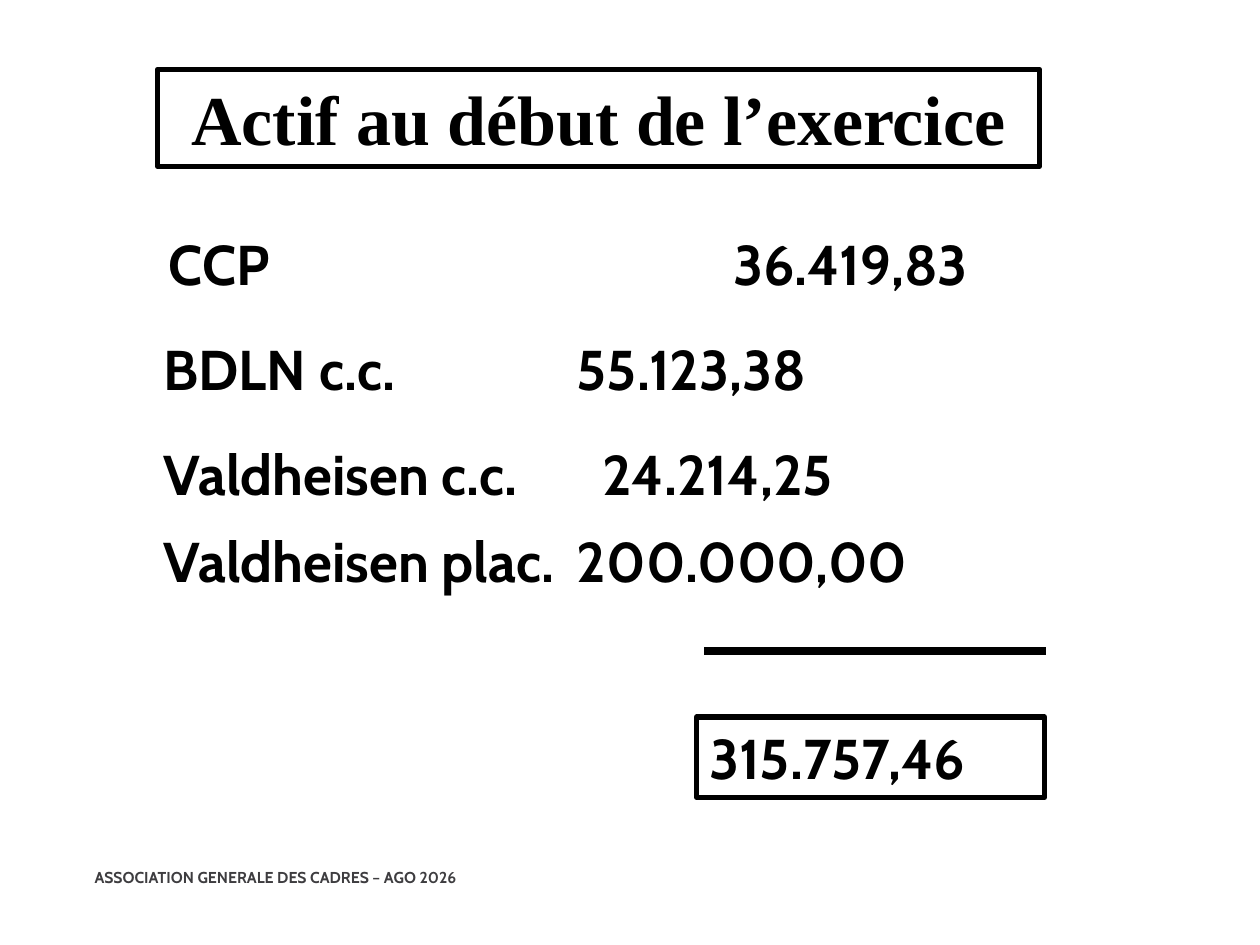
from dataclasses import dataclass

from lxml.etree import SubElement
from pptx import Presentation
from pptx.dml.color import RGBColor
from pptx.enum.shapes import MSO_CONNECTOR as Connector, MSO_SHAPE as Shape
from pptx.enum.text import MSO_ANCHOR as Anchor, PP_ALIGN as Align
from pptx.oxml.ns import qn
from pptx.util import Inches, Pt


@dataclass(frozen=True)
class Theme:
    ink: RGBColor = RGBColor(0x00, 0x00, 0x00)
    grey: RGBColor = RGBColor(0x3E, 0x3D, 0x40)
    body_font: str = "Cabin"
    title_font: str = "Times New Roman"
    title_size: Pt = Pt(40)
    body_size: Pt = Pt(32)
    footer_size: Pt = Pt(9)
    frame_width: Pt = Pt(3)
    rule_width: Pt = Pt(4.5)


theme = Theme()


def write(box, text, size=theme.body_size, font=theme.body_font,
          color=theme.ink, align=Align.LEFT, tab=None):
    """Put one bold paragraph in the box, with an optional tab stop in inches."""
    frame = box.text_frame
    frame.word_wrap = True
    frame.vertical_anchor = Anchor.TOP
    para = frame.paragraphs[0]
    para.text = text
    para.alignment = align
    if tab:
        stops = SubElement(para._p.get_or_add_pPr(), qn("a:tabLst"))
        SubElement(stops, qn("a:tab"), pos=str(Inches(tab)), algn="l")
    para.font.size = size
    para.font.name = font
    para.font.bold = True
    para.font.color.rgb = color


def add_frame(left, top, width, height):
    """Add an unfilled rectangle with a black outline."""
    box = page.shapes.add_shape(Shape.RECTANGLE, Inches(left), Inches(top),
                                Inches(width), Inches(height))
    box.shadow.inherit = False
    box.fill.background()
    box.line.color.rgb = theme.ink
    box.line.width = theme.frame_width
    return box


deck = Presentation()
deck.slide_width, deck.slide_height = Inches(10), Inches(7.5)
page = deck.slides.add_slide(deck.slide_layouts[6])

# Footer
footer = page.shapes.add_textbox(Inches(0.75), Inches(6.89), Inches(5.91), Inches(0.39))
frame = footer.text_frame
frame.margin_left = frame.margin_top = frame.margin_right = frame.margin_bottom = 0
write(footer, "ASSOCIATION GENERALE DES CADRES – AGO 2026",
      size=theme.footer_size, color=theme.grey)

# Title
title = add_frame(1.25, 0.55, 7, 0.77)
write(title, "Actif au début de l’exercice", size=theme.title_size,
      font=theme.title_font, align=Align.CENTER)

# Accounts: name, amount, left, top, tab stop
accounts = [
    ("CCP", "36.419,83", 1.24, 1.77, 4.48),
    ("BDLN c.c.", "55.123,38", 1.2, 2.61, 3.28),
    ("Valdheisen c.c.", "24.214,25", 1.2, 3.44, 3.48),
    ("Valdheisen plac.", "200.000,00", 1.2, 4.13, 3.28),
]
for name, amount, left, top, tab in accounts:
    row = page.shapes.add_textbox(Inches(left), Inches(top), Inches(7.19), Inches(0.64))
    write(row, f"{name}\t{amount}", tab=tab)

# Sum line and total
rule = page.shapes.add_connector(Connector.STRAIGHT, Inches(5.59), Inches(5.17),
                                 Inches(8.3), Inches(5.17))
rule.line.color.rgb = theme.ink
rule.line.width = theme.rule_width
SubElement(rule._element.spPr, qn("a:effectLst"))

total = add_frame(5.53, 5.69, 2.76, 0.64)
write(total, "315.757,46")

deck.save("out.pptx")
